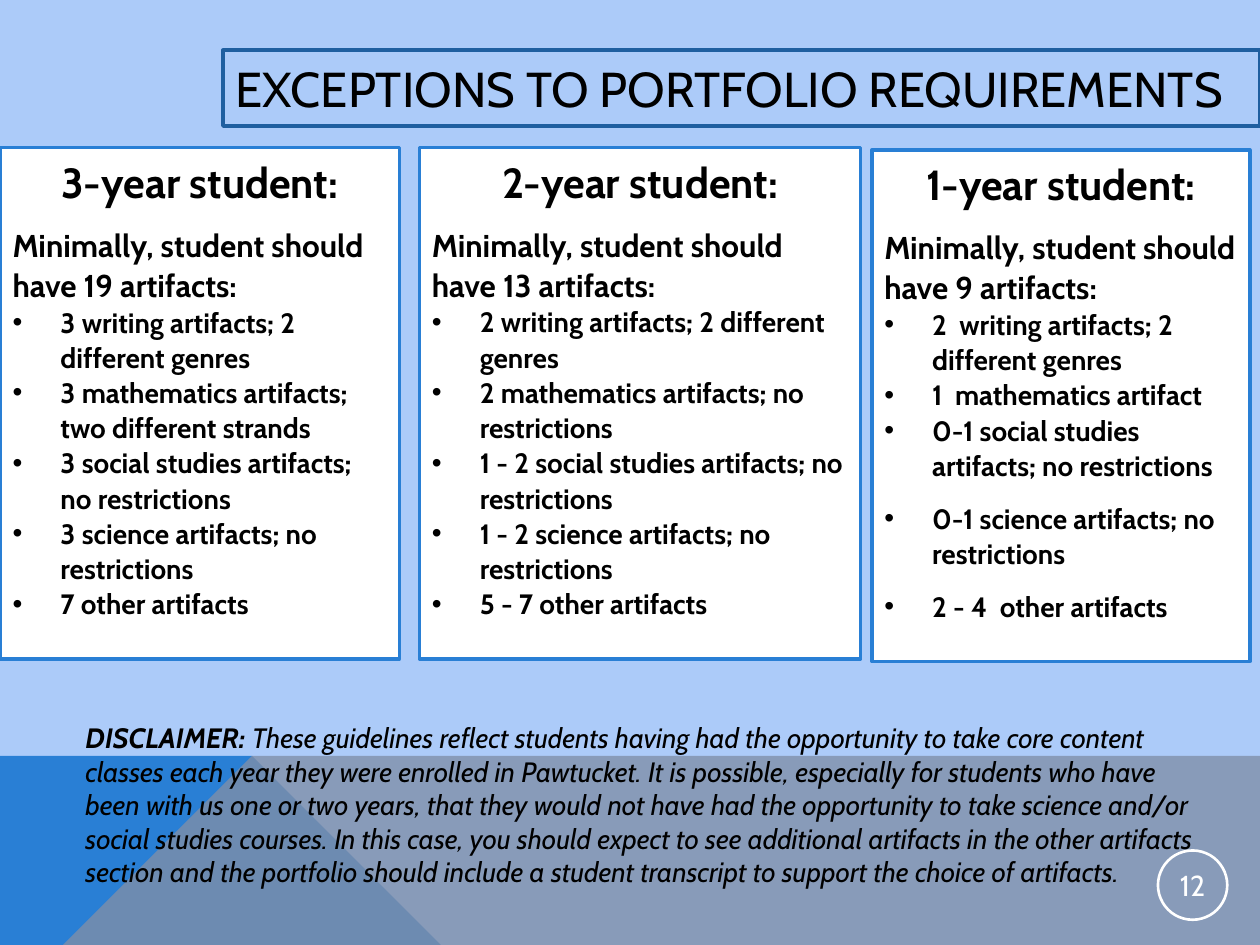
from dataclasses import dataclass

from lxml.etree import SubElement
from pptx import Presentation
from pptx.dml.color import RGBColor
from pptx.enum.shapes import MSO_SHAPE
from pptx.enum.text import MSO_ANCHOR, MSO_AUTO_SIZE, PP_ALIGN
from pptx.oxml.ns import qn
from pptx.util import Inches, Pt


@dataclass(frozen=True)
class Theme:
    font: str = "Cabin"
    background: str = "ACCBF9"
    accent: str = "297FD5"
    title_line: str = "1F5FA0"
    band: str = "7F8FA9"
    white: str = "FFFFFF"
    black: str = "000000"
    title_size: float = 28
    heading_size: float = 24
    lead_size: float = 18
    text_size: float = 16
    number_size: float = 16.5


THEME = Theme()

COLUMNS = [
    ("3-year student:", "Minimally, student should have 19 artifacts:",
     [("3 writing artifacts; 2 different genres", 0),
      ("3 mathematics artifacts; two different strands", 0),
      ("3 social studies artifacts; no restrictions", 0),
      ("3 science artifacts; no restrictions", 0),
      ("7 other artifacts", 0)]),
    ("2-year student:", "Minimally, student should have 13 artifacts:",
     [("2 writing artifacts; 2 different genres", 0),
      ("2 mathematics artifacts; no restrictions", 0),
      ("1 - 2 social studies artifacts; no restrictions", 0),
      ("1 - 2 science artifacts; no restrictions", 0),
      ("5 - 7 other artifacts", 10)]),
    ("1-year student:", "Minimally, student should have 9 artifacts:",
     [("2  writing artifacts; 2 different genres", 0),
      ("1  mathematics artifact", 0),
      ("0-1 social studies artifacts; no restrictions", 10),
      ("0-1 science artifacts; no restrictions", 10),
      ("2 - 4  other artifacts", 10)]),
]
COLUMN_PLACES = [(0, 1.17, 3.17, 4.06), (3.33, 1.17, 3.5, 4.06), (6.92, 1.19, 3, 4.06)]

DISCLAIMER = (
    "These guidelines reflect students having had the opportunity to take core content "
    "classes each year they were enrolled in Pawtucket. It is possible, especially for "
    "students who have been with us one or two years, that they would not have had the "
    "opportunity to take science and/or social studies courses. In this case, you should "
    "expect to see additional artifacts in the other artifacts section and the portfolio "
    "should include a student transcript to support the choice of artifacts."
)


def color(value):
    return RGBColor.from_string(value)


def place(box, left, top, width, height):
    box.left, box.top = Inches(left), Inches(top)
    box.width, box.height = Inches(width), Inches(height)


def outline(box, line_color, width):
    box.line.color.rgb = color(line_color)
    box.line.width = Pt(width)


def prepare_frame(box, anchor):
    frame = box.text_frame
    frame.word_wrap = True
    frame.auto_size = MSO_AUTO_SIZE.NONE
    frame.vertical_anchor = anchor
    return frame


def add_run(para, text, size, ink=THEME.black, bold=False, italic=False):
    span = para.add_run()
    span.text = text
    span.font.name = THEME.font
    span.font.size = Pt(size)
    span.font.color.rgb = color(ink)
    span.font.bold = bold
    span.font.italic = italic


def format_para(para, align=PP_ALIGN.LEFT, after=0, bullet=False):
    para.alignment = align
    para.line_spacing = 1.05
    para.space_before = Pt(0)
    para.space_after = Pt(after)
    properties = para._p.get_or_add_pPr()
    properties.set("marL", str(Inches(0.38) if bullet else 0))
    properties.set("indent", str(-Inches(0.38) if bullet else 0))
    if bullet:
        SubElement(properties, qn("a:buFont")).set("typeface", "Arial")
        SubElement(properties, qn("a:buChar")).set("char", "•")
    else:
        SubElement(properties, qn("a:buNone"))


def add_band(page, points, fill, opacity=100):
    builder = page.shapes.build_freeform(*points[0], scale=Inches(1))
    builder.add_line_segments(points[1:], close=True)
    band = builder.convert_to_shape()
    band.shadow.inherit = False
    band.line.fill.background()
    band.fill.solid()
    band.fill.fore_color.rgb = color(fill)
    if opacity < 100:
        tint = band.fill._xPr.find(qn("a:solidFill"))[0]
        SubElement(tint, qn("a:alpha")).set("val", str(opacity * 1000))


def add_page_number(page, number):
    box = page.shapes.add_shape(MSO_SHAPE.OVAL, 0, 0, 0, 0)
    place(box, 9.19, 6.75, 0.55, 0.55)
    box.shadow.inherit = False
    box.fill.background()
    outline(box, THEME.white, 1.5)
    frame = prepare_frame(box, MSO_ANCHOR.MIDDLE)
    frame.margin_left = frame.margin_right = Inches(0.01)
    frame.margin_top = frame.margin_bottom = Inches(0.01)
    para = frame.paragraphs[0]
    para.alignment = PP_ALIGN.CENTER
    add_run(para, number, THEME.number_size, THEME.white)


def fill_title(box, text):
    place(box, 1.77, 0.4, 8.23, 0.6)
    outline(box, THEME.title_line, 2.25)
    para = prepare_frame(box, MSO_ANCHOR.MIDDLE).paragraphs[0]
    para.alignment = PP_ALIGN.LEFT
    add_run(para, text, THEME.title_size)


def fill_column(box, position, heading, lead, items):
    place(box, *position)
    box.fill.solid()
    box.fill.fore_color.rgb = color(THEME.white)
    outline(box, THEME.accent, 2)
    frame = prepare_frame(box, MSO_ANCHOR.TOP)
    para = frame.paragraphs[0]
    format_para(para, PP_ALIGN.CENTER, after=10)
    add_run(para, heading, THEME.heading_size, bold=True)
    para = frame.add_paragraph()
    format_para(para)
    add_run(para, lead, THEME.lead_size, bold=True)
    for text, after in items:
        para = frame.add_paragraph()
        format_para(para, after=after, bullet=True)
        add_run(para, text, THEME.text_size, bold=True)


def add_disclaimer(page):
    box = page.shapes.add_textbox(0, 0, 0, 0)
    place(box, 0.58, 5.67, 9, 1.72)
    para = prepare_frame(box, MSO_ANCHOR.TOP).paragraphs[0]
    add_run(para, "DISCLAIMER: ", THEME.text_size, bold=True, italic=True)
    add_run(para, DISCLAIMER, THEME.text_size, italic=True)


def main():
    deck = Presentation()
    deck.slide_width, deck.slide_height = Inches(10), Inches(7.5)
    page = deck.slides.add_slide(deck.slide_layouts[1])
    page.background.fill.solid()
    page.background.fill.fore_color.rgb = color(THEME.background)
    add_band(page, [(0, 7.5), (0, 5.52), (2.23, 5.52), (3.91, 7.5)], THEME.accent)
    add_band(page, [(0, 7.5), (2.23, 5.52), (10, 5.53), (10, 7.5)], THEME.band, 80)
    add_page_number(page, "12")
    fill_title(page.shapes.title, "EXCEPTIONS TO PORTFOLIO REQUIREMENTS")
    boxes = [page.placeholders[1]]
    boxes += [page.shapes.add_textbox(0, 0, 0, 0) for _ in COLUMNS[1:]]
    for box, position, column in zip(boxes, COLUMN_PLACES, COLUMNS):
        fill_column(box, position, *column)
    add_disclaimer(page)
    deck.save("out.pptx")


if __name__ == "__main__":
    main()
